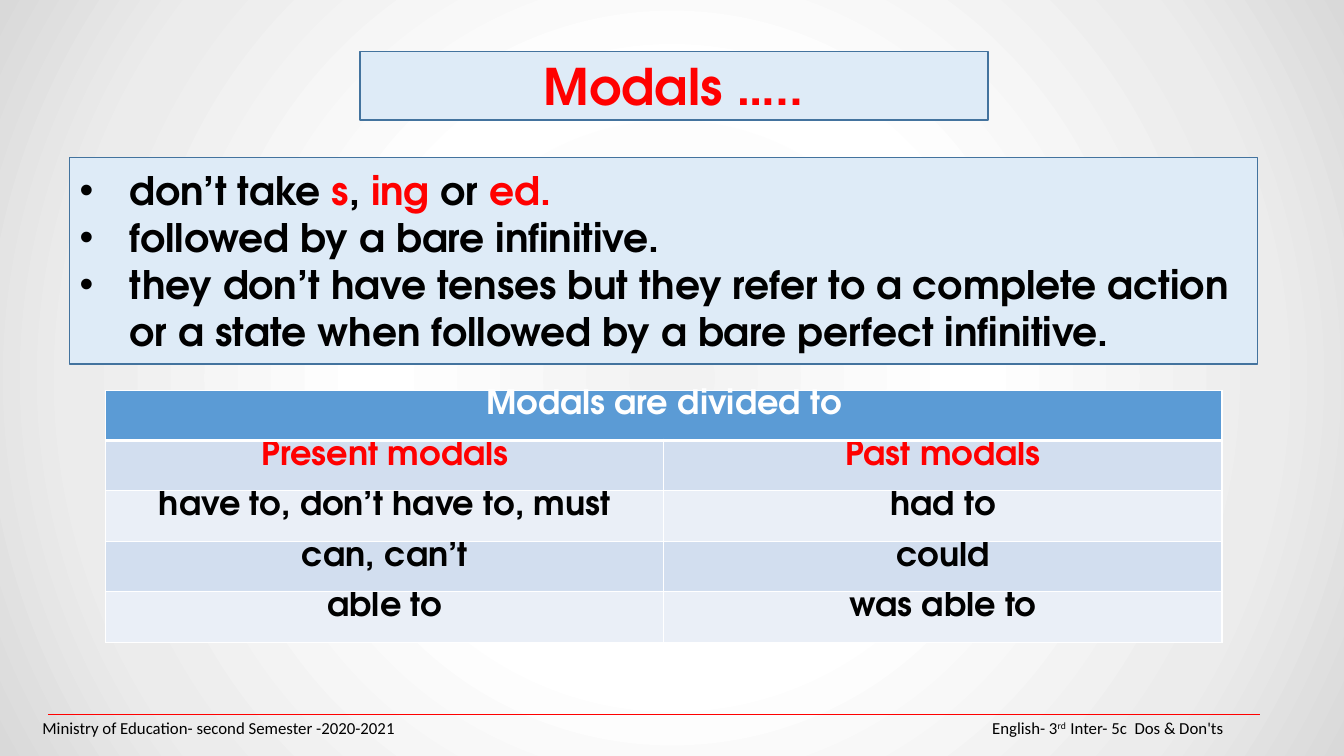
from dataclasses import dataclass

from pptx import Presentation
from pptx.dml.color import RGBColor
from pptx.enum import shapes, text
from pptx.oxml import parse_xml
from pptx.oxml.ns import nsdecls
from pptx.util import Inches, Pt

COLORS = {
    "black": "000000", "white": "FFFFFF", "red": "FF0000",
    "panel": "DEEBF7", "outline": "43739E",
    "header": "5B9BD5", "band_dark": "D2DEEF", "band_light": "EAEFF7",
}
BACKGROUND_STOPS = [(0, "F2F2F2"), (39, "FFFFFF"), (78, "ECECEC"), (100, "D9D9D9")]
DISPLAY_FONT = "TeX Gyre Adventor"
FOOTER_FONT = "Calibri"


@dataclass
class Span:
    text: str
    color: str = "black"
    superscript: bool = False


@dataclass
class Box:
    left: float
    top: float
    width: float
    height: float

    def lengths(self) -> list:
        return [Inches(n) for n in (self.left, self.top, self.width, self.height)]


@dataclass
class FooterNote:
    box: Box
    spans: list[Span]


TITLE_BOX = Box(3.57, 0.51, 6.23, 0.68)
RULES_BOX = Box(0.69, 1.56, 11.78, 2.05)
TABLE_BOX = Box(1.05, 3.87, 11.07, 2.5)

RULES = [
    [Span("don’t take "), Span("s", "red"), Span(", "), Span("ing ", "red"),
     Span("or "), Span("ed.", "red")],
    [Span("followed by a bare infinitive.")],
    [Span("they don’t have tenses but they refer to a complete action "
          "or a state when followed by a bare perfect infinitive.")],
]
MODALS = [
    ("Modals are divided to", ""),
    ("Present modals", "Past modals"),
    ("have to, don’t have to, must", "had to"),
    ("can, can’t", "could"),
    ("able to", "was able to"),
]
FOOTER_NOTES = [
    FooterNote(Box(0.42, 7.07, 5, 0.3),
               [Span("Ministry of Education- second Semester -2020-2021")]),
    FooterNote(Box(9.84, 7.07, 3, 0.3),
               [Span("English- 3"), Span("rd  ", superscript=True),
                Span("Inter- 5c  Dos & Don'ts")]),
]


def rgb(name: str) -> RGBColor:
    return RGBColor.from_string(COLORS[name])


def add_spans(paragraph, spans: list[Span], size: float,
              font: str = DISPLAY_FONT, bold: bool = True) -> None:
    for span in spans:
        run = paragraph.add_run()
        run.text = span.text
        run.font.name = font
        run.font.size = Pt(size)
        run.font.bold = bold
        run.font.color.rgb = rgb(span.color)
        if span.superscript:
            run._r.get_or_add_rPr().set("baseline", "30000")


def set_background(slide) -> None:
    """Fill the slide with a gradient radiating from its centre."""
    stops = "".join(f'<a:gs pos="{position * 1000}"><a:srgbClr val="{color}"/></a:gs>'
                    for position, color in BACKGROUND_STOPS)
    slide._element.cSld.insert(0, parse_xml(
        f'<p:bg {nsdecls("p", "a")}><p:bgPr><a:gradFill rotWithShape="1">'
        f'<a:gsLst>{stops}</a:gsLst><a:path path="circle">'
        '<a:fillToRect l="50000" t="50000" r="50000" b="50000"/></a:path>'
        '</a:gradFill><a:effectLst/></p:bgPr></p:bg>'))


def add_panel(slide, box: Box):
    """Add an outlined pale rectangle and return its text frame."""
    shape = slide.shapes.add_shape(shapes.MSO_SHAPE.RECTANGLE, *box.lengths())
    shape.shadow.inherit = False
    shape.fill.solid()
    shape.fill.fore_color.rgb = rgb("panel")
    shape.line.color.rgb = rgb("outline")
    shape.line.width = Pt(1)
    frame = shape.text_frame
    frame.word_wrap = True
    frame.vertical_anchor = text.MSO_ANCHOR.MIDDLE
    return frame


def add_title(slide) -> None:
    paragraph = add_panel(slide, TITLE_BOX).paragraphs[0]
    paragraph.alignment = text.PP_ALIGN.CENTER
    add_spans(paragraph, [Span("Modals …..", "red")], 36)


def add_rules(slide) -> None:
    frame = add_panel(slide, RULES_BOX)
    for index, spans in enumerate(RULES):
        paragraph = frame.add_paragraph() if index else frame.paragraphs[0]
        paragraph.alignment = text.PP_ALIGN.LEFT
        properties = paragraph._p.get_or_add_pPr()
        properties.set("marL", str(Inches(0.5)))
        properties.set("indent", str(Inches(-0.5)))
        properties.append(parse_xml(f'<a:buFont {nsdecls("a")} typeface="Arial"/>'))
        properties.append(parse_xml(f'<a:buChar {nsdecls("a")} char="•"/>'))
        add_spans(paragraph, spans, 28)


def set_borders(cell, row: int) -> None:
    """Draw white cell edges, thicker between the header and the body."""
    widths = {"lnL": 1, "lnR": 1, "lnT": 3 if row == 1 else 1, "lnB": 3 if row == 0 else 1}
    for index, (edge, width) in enumerate(widths.items()):
        cell._tc.get_or_add_tcPr().insert(index, parse_xml(
            f'<a:{edge} {nsdecls("a")} w="{Pt(width)}"><a:solidFill>'
            f'<a:srgbClr val="{COLORS["white"]}"/></a:solidFill></a:{edge}>'))


def add_modals_table(slide) -> None:
    table = slide.shapes.add_table(len(MODALS), 2, *TABLE_BOX.lengths()).table
    table.cell(0, 0).merge(table.cell(0, 1))
    for row, words in enumerate(MODALS):
        table.rows[row].height = Inches(TABLE_BOX.height / len(MODALS))
        fill = "header" if row == 0 else "band_dark" if row % 2 else "band_light"
        color = {0: "white", 1: "red"}.get(row, "black")
        for column, word in enumerate(words):
            cell = table.cell(row, column)
            cell.margin_top = cell.margin_bottom = 0
            cell.fill.solid()
            cell.fill.fore_color.rgb = rgb(fill)
            set_borders(cell, row)
            if word:
                paragraph = cell.text_frame.paragraphs[0]
                paragraph.alignment = text.PP_ALIGN.CENTER
                add_spans(paragraph, [Span(word, color)], 24)


def add_footer(slide) -> None:
    rule = slide.shapes.add_connector(
        shapes.MSO_CONNECTOR.STRAIGHT,
        Inches(0.48), Inches(7.09), Inches(12.5), Inches(7.09))
    rule.line.color.rgb = rgb("red")
    rule.line.width = Pt(0.75)
    rule._element.spPr.append(parse_xml(f'<a:effectLst {nsdecls("a")}/>'))
    for note in FOOTER_NOTES:
        frame = slide.shapes.add_textbox(*note.box.lengths()).text_frame
        frame.word_wrap = True
        frame.vertical_anchor = text.MSO_ANCHOR.MIDDLE
        frame.margin_left = frame.margin_right = 0
        add_spans(frame.paragraphs[0], note.spans, 12, FOOTER_FONT, bold=False)


def main() -> None:
    presentation = Presentation()
    presentation.slide_width = Inches(13.33)
    presentation.slide_height = Inches(7.5)
    slide = presentation.slides.add_slide(presentation.slide_layouts[6])
    set_background(slide)
    add_title(slide)
    add_modals_table(slide)
    add_footer(slide)
    add_rules(slide)
    presentation.save("out.pptx")


if __name__ == "__main__":
    main()
